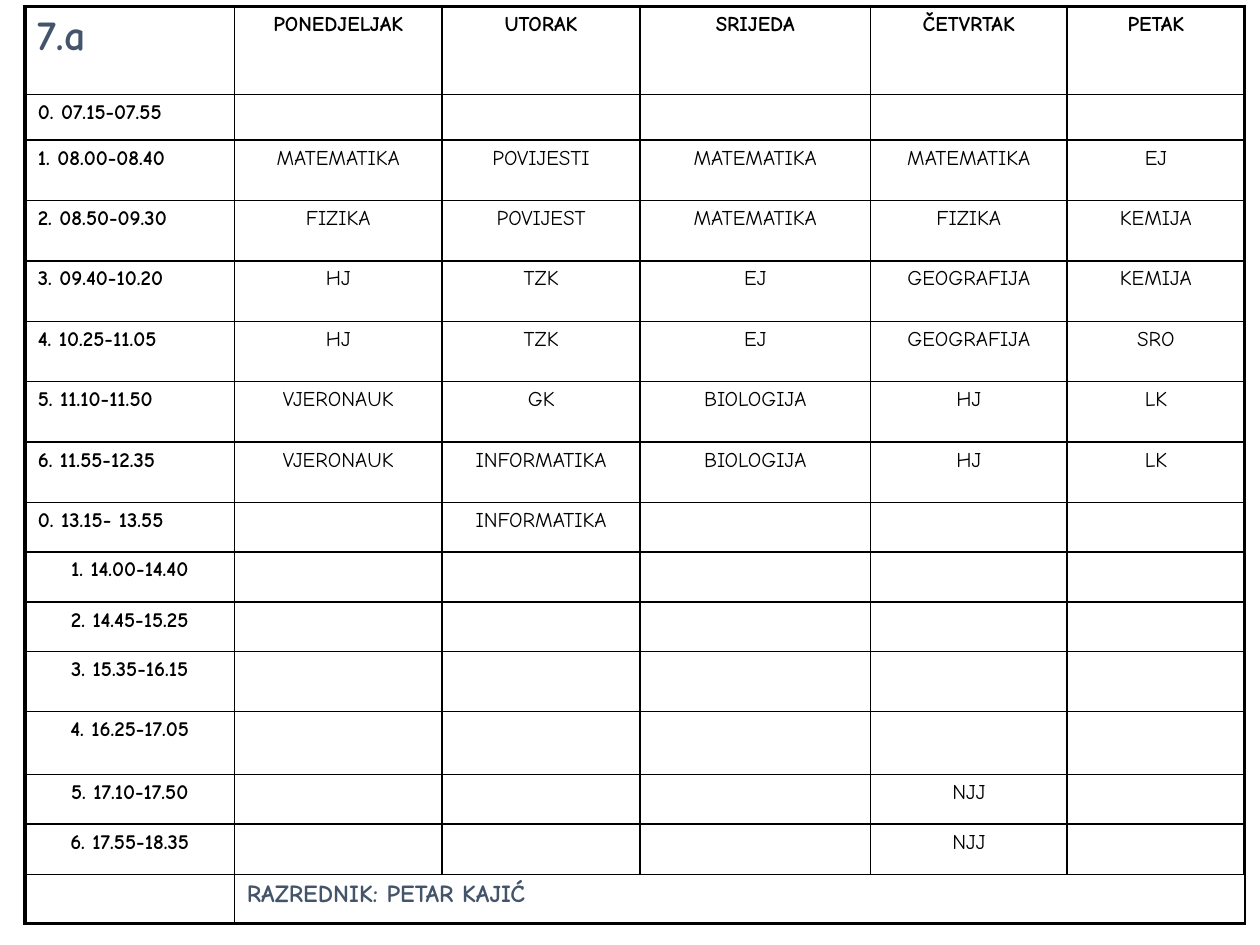
from dataclasses import dataclass

from lxml.etree import SubElement
from pptx import Presentation
from pptx.dml.color import RGBColor
from pptx.enum.text import PP_ALIGN
from pptx.oxml.ns import qn
from pptx.util import Inches, Pt


@dataclass(frozen=True)
class Theme:
    font: str = "Comic Neue"
    ink: str = "000000"
    accent: str = "44546A"
    class_size: float = 24
    teacher_size: float = 14
    body_size: float = 12
    inner_line: float = 1
    outer_line: float = 2.25


COLUMN_WIDTHS = [1.66, 1.65, 1.57, 1.83, 1.56, 1.41]
CLASS_NAME = "7.a"
HEADER_HEIGHT = 0.7
DAYS = ["PONEDJELJAK", "UTORAK", "SRIJEDA", "ČETVRTAK", "PETAK"]
FREE = [""] * len(DAYS)
MORNING = [
    (0.36, "0. 07.15-07.55", FREE),
    (0.48, "1. 08.00-08.40", ["MATEMATIKA", "POVIJESTI", "MATEMATIKA", "MATEMATIKA", "EJ"]),
    (0.48, "2. 08.50-09.30", ["FIZIKA", "POVIJEST", "MATEMATIKA", "FIZIKA", "KEMIJA"]),
    (0.48, "3. 09.40-10.20", ["HJ", "TZK", "EJ", "GEOGRAFIJA", "KEMIJA"]),
    (0.48, "4. 10.25-11.05", ["HJ", "TZK", "EJ", "GEOGRAFIJA", "SRO"]),
    (0.48, "5. 11.10-11.50", ["VJERONAUK", "GK", "BIOLOGIJA", "HJ", "LK"]),
    (0.48, "6. 11.55-12.35", ["VJERONAUK", "INFORMATIKA", "BIOLOGIJA", "HJ", "LK"]),
    (0.39, "0. 13.15- 13.55", ["", "INFORMATIKA", "", "", ""]),
]
AFTERNOON = [
    (0.4, "1. 14.00-14.40", FREE),
    (0.39, "2. 14.45-15.25", FREE),
    (0.48, "3. 15.35-16.15", FREE),
    (0.5, "4. 16.25-17.05", FREE),
    (0.39, "5. 17.10-17.50", ["", "", "", "NJJ", ""]),
    (0.4, "6. 17.55-18.35", ["", "", "", "NJJ", ""]),
]
TEACHER = "RAZREDNIK: PETAR KAJIĆ"
TEACHER_HEIGHT = 0.39


class TimetablePage:
    def __init__(self, deck, theme):
        self.theme = theme
        self.page = deck.slides.add_slide(deck.slide_layouts[6])

    def add_grid(self, left, top, widths, heights):
        """Add an unfilled table with thin inner lines and a thick frame."""
        frame = self.page.shapes.add_table(
            len(heights), len(widths), Inches(left), Inches(top),
            Inches(sum(widths)), Inches(sum(heights)))
        table = frame.table
        table.first_row = table.horz_banding = False
        for column, width in zip(table.columns, widths):
            column.width = Inches(width)
        last_row, last_column = len(heights) - 1, len(widths) - 1
        for i, (row, height) in enumerate(zip(table.rows, heights)):
            row.height = Inches(height)
            for j, cell in enumerate(row.cells):
                self.add_borders(cell, {"a:lnL": j == 0, "a:lnR": j == last_column,
                                        "a:lnT": i == 0, "a:lnB": i == last_row})
                cell.fill.background()
        return table

    def add_borders(self, cell, edges):
        """Draw each edge; its value tells whether it is on the outer frame."""
        properties = cell._tc.get_or_add_tcPr()
        for tag, is_outer in edges.items():
            width = self.theme.outer_line if is_outer else self.theme.inner_line
            line = SubElement(properties, qn(tag), w=str(Pt(width)))
            fill = SubElement(line, qn("a:solidFill"))
            SubElement(fill, qn("a:srgbClr"), val=self.theme.ink)

    def fill_cell(self, cell, text, size=None, color=None, bold=False, centered=True):
        size = size or self.theme.body_size
        para = cell.text_frame.paragraphs[0]
        para.alignment = PP_ALIGN.CENTER if centered else PP_ALIGN.LEFT
        if not text:
            # Keeps an empty cell from growing to the default type size.
            SubElement(para._p, qn("a:endParaRPr"), sz=str(int(size * 100)))
            return
        span = para.add_run()
        span.text = text
        span.font.name = self.theme.font
        span.font.size = Pt(size)
        span.font.bold = bold
        span.font.color.rgb = RGBColor.from_string(color or self.theme.ink)


def main():
    theme = Theme()
    deck = Presentation()
    deck.slide_width, deck.slide_height = Inches(10), Inches(7.5)
    page = TimetablePage(deck, theme)

    lessons = MORNING + AFTERNOON
    heights = [HEADER_HEIGHT] + [height for height, _, _ in lessons] + [TEACHER_HEIGHT]
    table = page.add_grid(0.2, 0.05, COLUMN_WIDTHS, heights)

    page.fill_cell(table.cell(0, 0), CLASS_NAME, theme.class_size, theme.accent,
                   bold=True, centered=False)
    for column, day in enumerate(DAYS, start=1):
        page.fill_cell(table.cell(0, column), day, bold=True)

    for row, (_, period, subjects) in enumerate(lessons, start=1):
        page.fill_cell(table.cell(row, 0), period, bold=True, centered=row > len(MORNING))
        for column, subject in enumerate(subjects, start=1):
            page.fill_cell(table.cell(row, column), subject)

    last_row = len(heights) - 1
    page.fill_cell(table.cell(last_row, 0), "")
    teacher_cell = table.cell(last_row, 1)
    teacher_cell.merge(table.cell(last_row, len(DAYS)))
    page.fill_cell(teacher_cell, TEACHER, theme.teacher_size, theme.accent,
                   bold=True, centered=False)

    deck.save("out.pptx")


if __name__ == "__main__":
    main()
